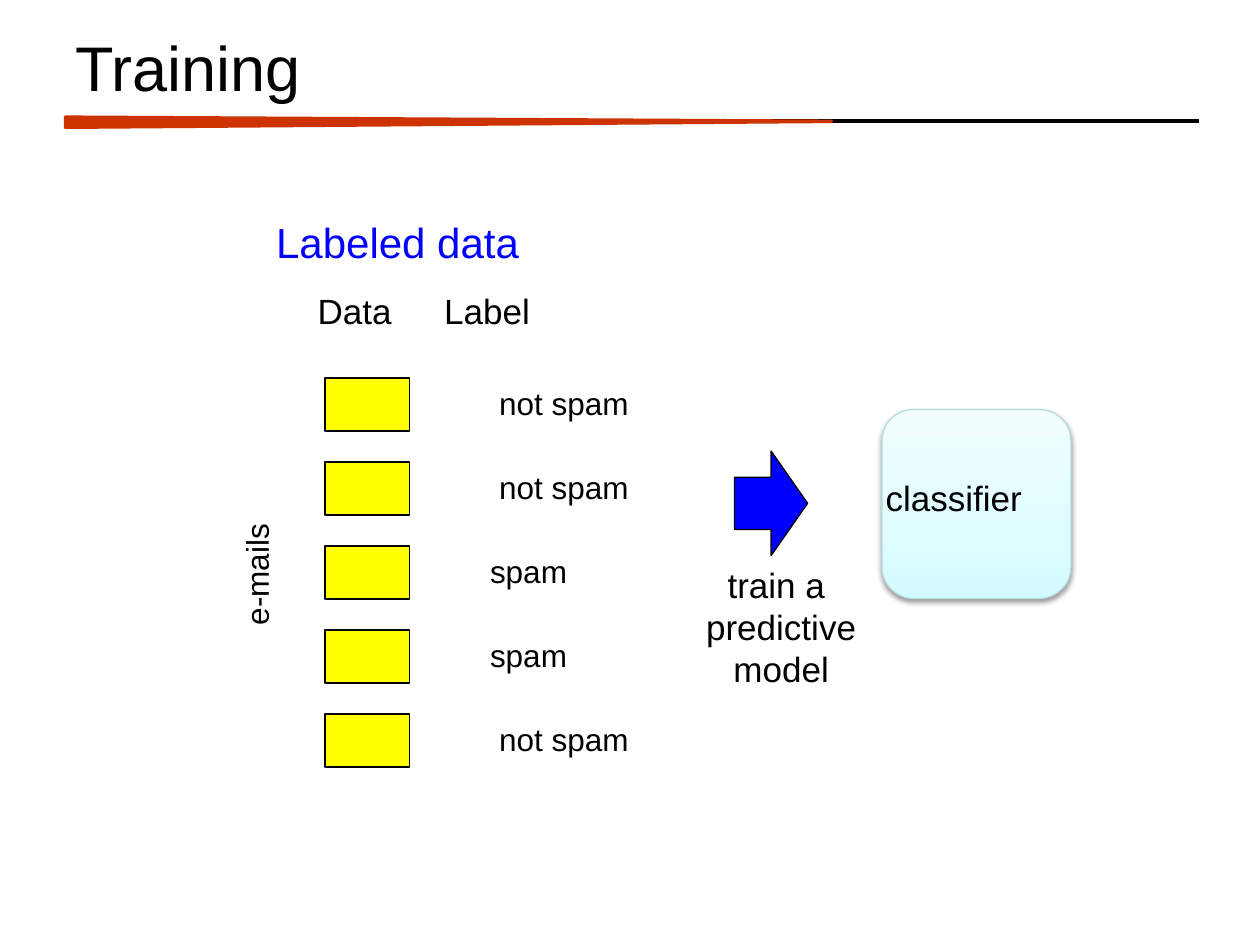
"""Build the slide on training a spam classifier from labeled e-mails."""
from copy import deepcopy
from dataclasses import dataclass
from typing import Any

from lxml import etree
from pptx import Presentation
from pptx import util as u
from pptx.dml.color import RGBColor
from pptx.enum import shapes as s, text as t
from pptx.oxml import ns

INK = {
    "black": "000000", "red": "CC3300", "blue": "0000FF", "yellow": "FFFF00",
    "edge": "B6DCDF", "deep": "D3FBFF", "mid": "DFFCFF", "pale": "F2FEFF",
}
KIND = s.MSO_SHAPE
FRAME = {"word_wrap": False, "auto_size": t.MSO_AUTO_SIZE.SHAPE_TO_FIT_TEXT}


@dataclass
class Box:
    x: float
    y: float
    w: float
    h: float

    def args(self) -> list[int]:
        return [u.Inches(v) for v in (self.x, self.y, self.w, self.h)]


@dataclass
class Note:
    box: Box
    words: str
    size: int = 20
    ink: str = "black"
    turn: int = 0


def rgb(name: str) -> RGBColor:
    return RGBColor.from_string(INK[name])


def put(obj: Any, form: dict) -> None:
    for key, val in form.items():
        setattr(obj, key, val)


def style(para: Any, size: int, ink: str, align: Any) -> None:
    para.alignment = align
    put(para.font, {"name": "Arial", "size": u.Pt(size)})
    para.font.color.rgb = rgb(ink)


def write(host: Any, note: Note) -> None:
    box = host.add_textbox(*note.box.args())
    box.rotation = note.turn
    frame = box.text_frame
    frame.text = note.words
    put(frame, FRAME)
    for para in frame.paragraphs:
        style(para, note.size, note.ink, t.PP_ALIGN.CENTER)


def draw(host: Any, kind: Any, box: Box, fill: str, edge: str = "black",
         width: float = 0.75) -> Any:
    shape = host.add_shape(kind, *box.args())
    shape.shadow.inherit = False
    shape.fill.solid()
    shape.fill.fore_color.rgb = rgb(fill)
    shape.line.color.rgb = rgb(edge)
    shape.line.width = u.Pt(width)
    return shape


def shade(shape: Any) -> None:
    shape.fill.gradient()
    shape.fill.gradient_angle = 90
    stops = shape.element.spPr.find(".//" + ns.qn("a:gsLst"))
    stops.insert(1, deepcopy(stops[0]))
    marks = (("deep", 0), ("mid", 0.35), ("pale", 1))
    for stop, (name, pos) in zip(shape.fill.gradient_stops, marks):
        stop.position = pos
        stop.color.rgb = rgb(name)


def cast(shape: Any) -> None:
    glow = shape.element.spPr.find(ns.qn("a:effectLst"))
    drop = etree.SubElement(
        glow, ns.qn("a:outerShdw"), blurRad=str(u.Pt(3.1)),
        dist=str(u.Pt(1.6)), dir="5400000", rotWithShape="0")
    tint = etree.SubElement(drop, ns.qn("a:srgbClr"), val=INK["black"])
    etree.SubElement(tint, ns.qn("a:alpha"), val="38000")


def rule(host: Any) -> None:
    ends = [u.Inches(v) for v in (0.52, 0.96, 9.52, 0.96)]
    line = host.add_connector(s.MSO_CONNECTOR.STRAIGHT, *ends)
    line.line.color.rgb = rgb("black")
    line.line.width = u.Pt(2)
    etree.SubElement(line.element.spPr, ns.qn("a:effectLst"))
    wedge = draw(host, KIND.ISOSCELES_TRIANGLE, Box(3.52, -2.07, 0.08, 6.08),
                 "red", "red", 2)
    wedge.rotation = 90
    wedge.adjustments[0] = 0.417


def head(slide: Any) -> None:
    title = slide.shapes.title
    put(title, dict(zip(("left", "top", "width", "height"),
                        Box(0.5, 0.17, 9, 0.72).args())))
    title.text = "Training"
    title.text_frame.vertical_anchor = t.MSO_ANCHOR.MIDDLE
    style(title.text_frame.paragraphs[0], 36, "black", t.PP_ALIGN.LEFT)


def main() -> None:
    deck = Presentation()
    put(deck, {"slide_width": u.Inches(10), "slide_height": u.Inches(7.5)})
    slide = deck.slides.add_slide(deck.slide_layouts[5])
    host = slide.shapes
    rule(host)
    head(slide)

    labels = ("not spam", "not spam", "spam", "spam", "not spam")
    for row, label in enumerate(labels):
        y = 3 + row * 2 / 3
        draw(host, KIND.RECTANGLE, Box(2.58, y, 0.67, 0.42), "yellow")
        wide = 1.59 if label == "not spam" else 1.03
        write(host, Note(Box(3.68, y, wide, 0.5), label, 18))

    draw(host, KIND.RIGHT_ARROW, Box(5.83, 3.58, 0.58, 0.83), "blue")
    notes = (
        Note(Box(2.08, 1.67, 2.15, 0.5), "Labeled data", 24, "blue"),
        Note(Box(2.42, 2.25, 0.79, 0.44), "Data"),
        Note(Box(3.42, 2.25, 0.89, 0.44), "Label"),
        Note(Box(1.44, 4.31, 1.29, 0.5), "e-mails", 18, turn=270),
        Note(Box(5.5, 4.42, 1.4, 1.11), "train a \npredictive\nmodel"),
    )
    for note in notes:
        write(host, note)

    group = host.add_group_shape().shapes
    model = draw(group, KIND.ROUNDED_RECTANGLE, Box(7, 3.25, 1.5, 1.5),
                 "pale", "edge")
    shade(model)
    cast(model)
    write(group, Note(Box(6.92, 3.73, 1.3, 0.44), "classifier"))
    deck.save("out.pptx")


if __name__ == "__main__":
    main()
